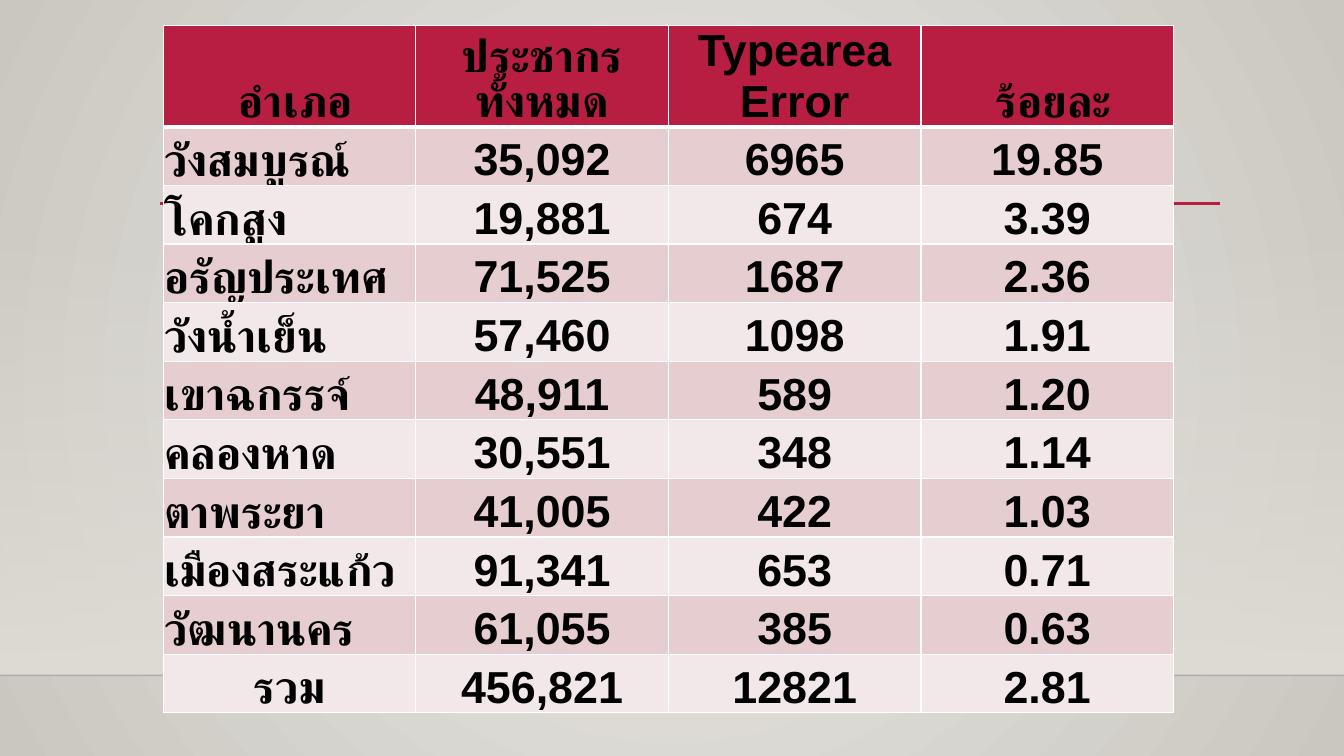
from lxml import etree
from pptx import Presentation
from pptx import util as u
from pptx.dml.color import RGBColor
from pptx.enum import shapes, text
from pptx.oxml import parse_xml
from pptx.oxml.ns import nsdecls, qn

CRIMSON = RGBColor(0xB7, 0x1E, 0x42)
PINK = RGBColor(0xE6, 0xCD, 0xCF)
PALE_PINK = RGBColor(0xF3, 0xE8, 0xE9)
BACK_LIGHT = RGBColor(0xEC, 0xEA, 0xE7)
BACK_DARK = RGBColor(0xCA, 0xC7, 0xC1)
WALL = RGBColor(0xDF, 0xDB, 0xD5)
WHITE = RGBColor(0xFF, 0xFF, 0xFF)
BLACK = RGBColor(0, 0, 0)
FLOOR_LINE = RGBColor(0, 0, 1)

SLIDE_WIDTH, SLIDE_HEIGHT = 13.33, 7.5
FLOOR = 6.7

HEADER = [" อำเภอ", "ประชากรทั้งหมด", "Typearea Error", " ร้อยละ"]
DISTRICTS = [
    ["วังสมบูรณ์", "35,092", "6965", "19.85"],
    ["โคกสูง", "19,881", "674", "3.39"],
    ["อรัญประเทศ", "71,525", "1687", "2.36"],
    ["วังน้ำเย็น", "57,460", "1098", "1.91"],
    ["เขาฉกรรจ์", "48,911", "589", "1.20"],
    ["คลองหาด", "30,551", "348", "1.14"],
    ["ตาพระยา", "41,005", "422", "1.03"],
    ["เมืองสระแก้ว", "91,341", "653", "0.71"],
    ["วัฒนานคร", "61,055", "385", "0.63"],
]
TOTAL = ["รวม", "456,821", "12821", "2.81"]


def write(frame, words, size=32, font="Arial", color=BLACK, bold=True,
          align=text.PP_ALIGN.CENTER):
    paragraph = frame.paragraphs[0]
    paragraph.alignment = align
    run = paragraph.add_run()
    run.text = words
    run.font.name, run.font.size, run.font.bold = font, u.Pt(size), bold
    run.font.color.rgb = color


def set_alpha(color_element, percent):
    etree.SubElement(color_element, qn("a:alpha")).set("val", str(percent * 1000))


def set_gradient(fill, first, last):
    fill.gradient()
    for stop, color in zip(fill.gradient_stops, (first, last)):
        stop.color.rgb = color


class SlideBuilder:
    def __init__(self, slide):
        self.slide = slide

    def background(self, center, edge):
        fill = self.slide.background.fill
        set_gradient(fill, center, edge)
        linear = next(self.slide.element.iter(qn("a:lin")))
        linear.getparent().replace(linear, parse_xml(
            f'<a:path {nsdecls("a")} path="circle">'
            '<a:fillToRect l="50000" t="50000" r="50000" b="50000"/></a:path>'))

    def fading_band(self, left, top, width, height, color):
        band = self.slide.shapes.add_shape(
            shapes.MSO_SHAPE.RECTANGLE, *map(u.Inches, (left, top, width, height)))
        band.shadow.inherit = False
        band.line.fill.background()
        set_gradient(band.fill, color, color)
        band.fill.gradient_angle = 270
        set_alpha(next(band.element.spPr.iter(qn("a:srgbClr"))), 0)

    def rule(self, left, right, y, color, width, alpha=100):
        line = self.slide.shapes.add_connector(
            shapes.MSO_CONNECTOR.STRAIGHT, *map(u.Inches, (left, y, right, y)))
        line.line.color.rgb = color
        line.line.width = u.Pt(width)
        if alpha < 100:
            set_alpha(next(line.element.spPr.iter(qn("a:srgbClr"))), alpha)
        etree.SubElement(line.element.spPr, qn("a:effectLst"))

    def cell_borders(self, cell, top=1, bottom=1):
        properties = cell._tc.get_or_add_tcPr()
        for side, width in (("L", 1), ("R", 1), ("T", top), ("B", bottom)):
            properties.append(parse_xml(
                f'<a:ln{side} {nsdecls("a")} w="{u.Pt(width)}"><a:solidFill>'
                f'<a:srgbClr val="{WHITE}"/></a:solidFill></a:ln{side}>'))

    def table(self, left, top, width, height, rows):
        frame = self.slide.shapes.add_table(
            len(rows), len(rows[0]), *map(u.Inches, (left, top, width, height)))
        table = frame.table
        for r, row in enumerate(rows):
            table.rows[r].height = u.Inches(height / len(rows))
            is_district = 0 < r < len(rows) - 1
            for c, words in enumerate(row):
                cell = table.cell(r, c)
                cell.margin_left = cell.margin_right = cell.margin_top = u.Inches(0.01)
                cell.margin_bottom = 0
                cell.vertical_anchor = text.MSO_ANCHOR.BOTTOM
                self.cell_borders(cell, top=3 if r == 1 else 1, bottom=3 if r == 0 else 1)
                cell.fill.solid()
                cell.fill.fore_color.rgb = (
                    CRIMSON if r == 0 else PINK if r % 2 else PALE_PINK)
                write(cell.text_frame, words, align=text.PP_ALIGN.LEFT
                      if is_district and c == 0 else text.PP_ALIGN.CENTER)


def main():
    presentation = Presentation()
    presentation.slide_width = u.Inches(SLIDE_WIDTH)
    presentation.slide_height = u.Inches(SLIDE_HEIGHT)
    builder = SlideBuilder(presentation.slides.add_slide(presentation.slide_layouts[6]))

    # Backdrop: wall, floor edge and accent rule
    builder.background(BACK_LIGHT, BACK_DARK)
    builder.fading_band(0, 2.21, SLIDE_WIDTH, FLOOR - 2.21, WALL)
    builder.rule(0, SLIDE_WIDTH, FLOOR, FLOOR_LINE, 1, alpha=20)
    builder.rule(1.59, 12.1, 2.02, CRIMSON, 2.5)

    # Population and error rate by district
    builder.table(1.62, 0.25, 10.02, 6.4, [HEADER, *DISTRICTS, TOTAL])

    presentation.save("out.pptx")


if __name__ == "__main__":
    main()
